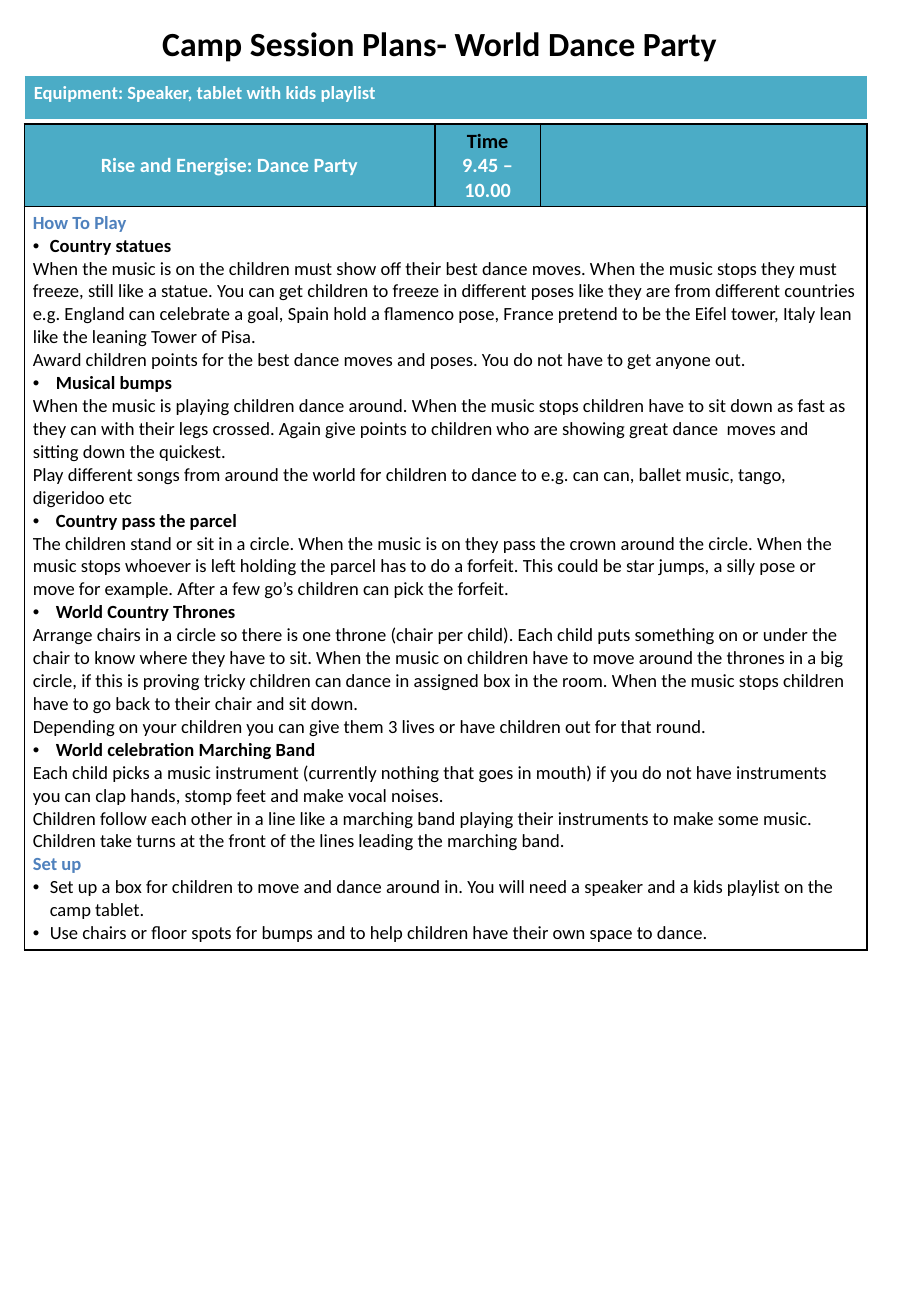
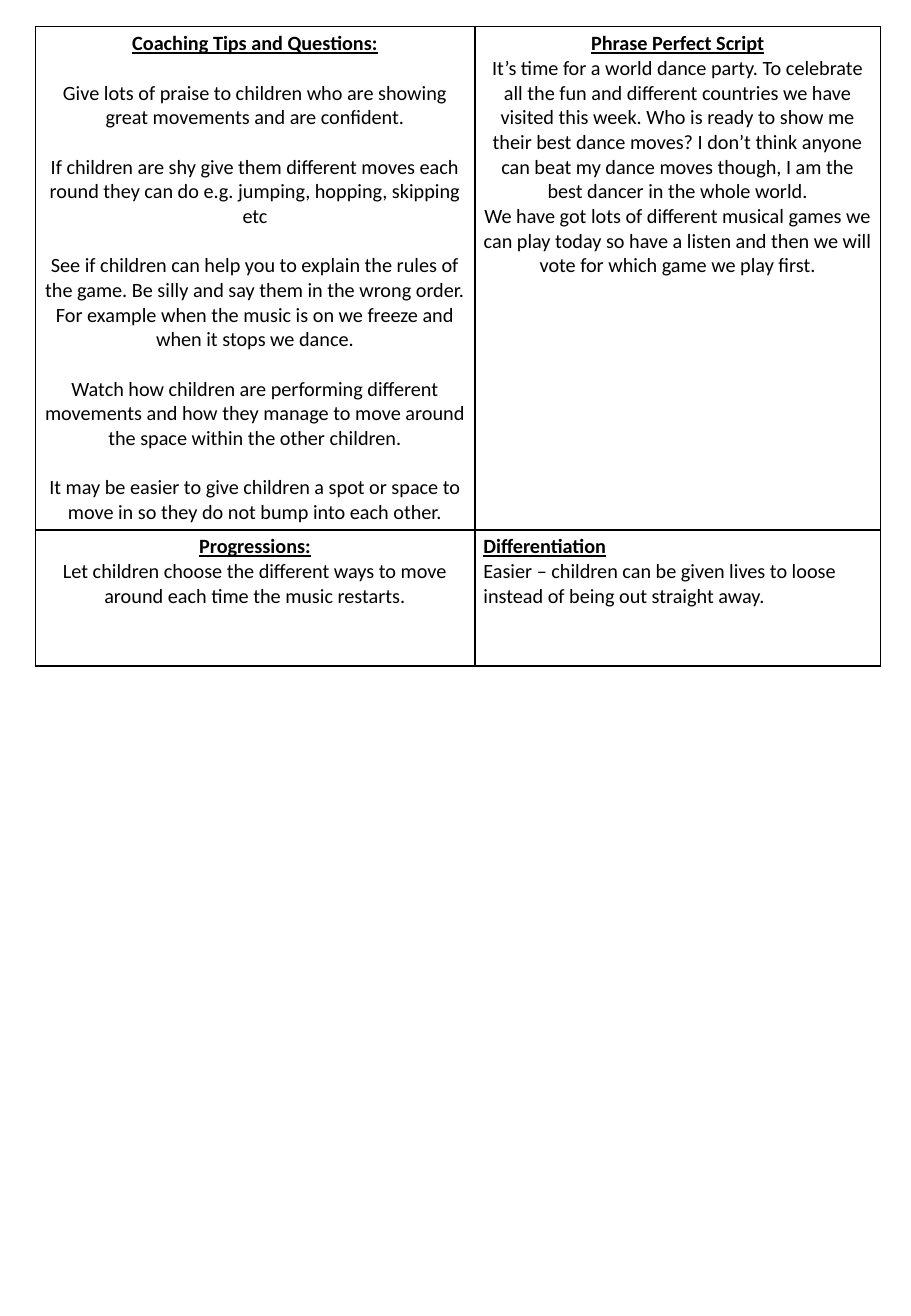
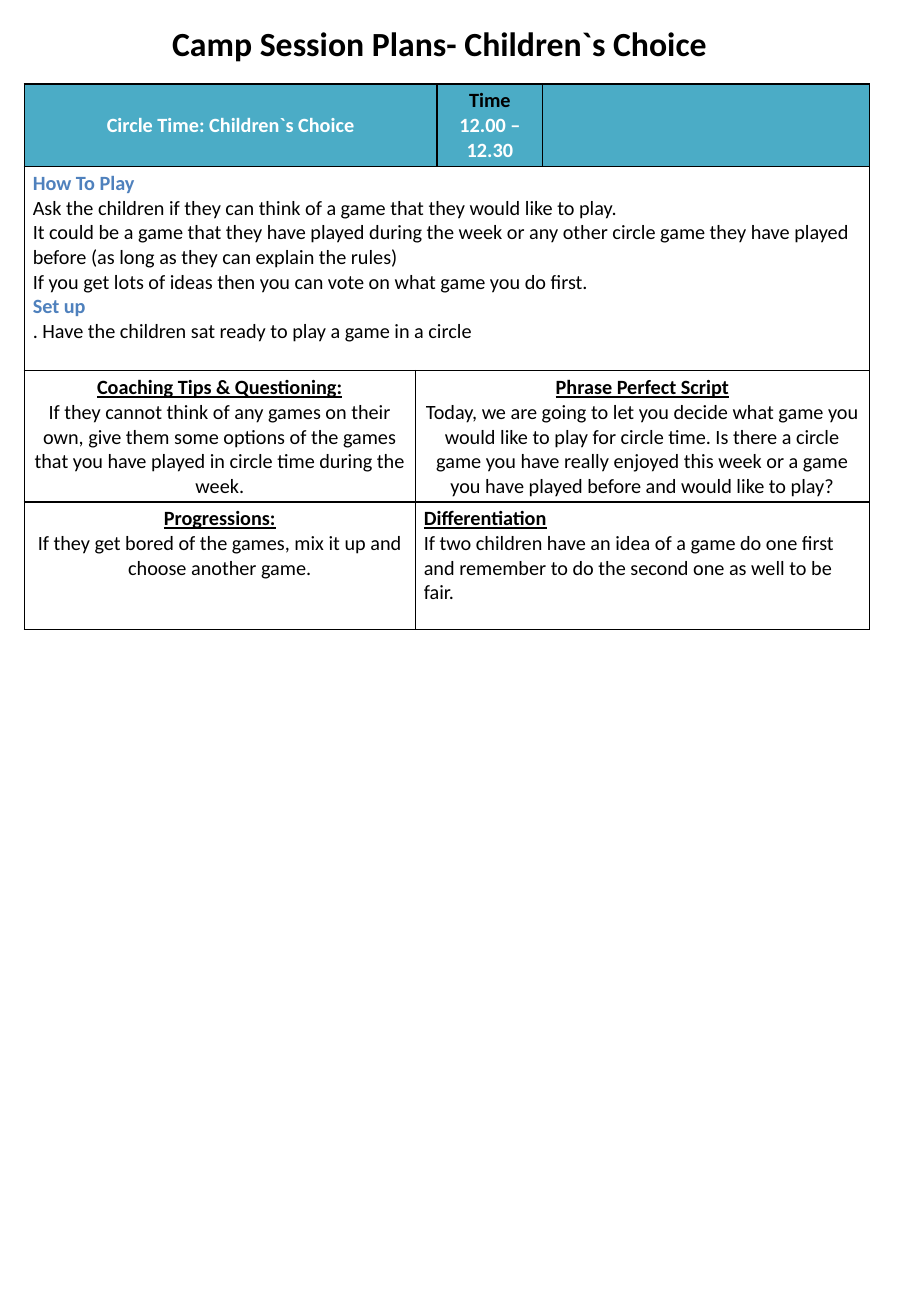
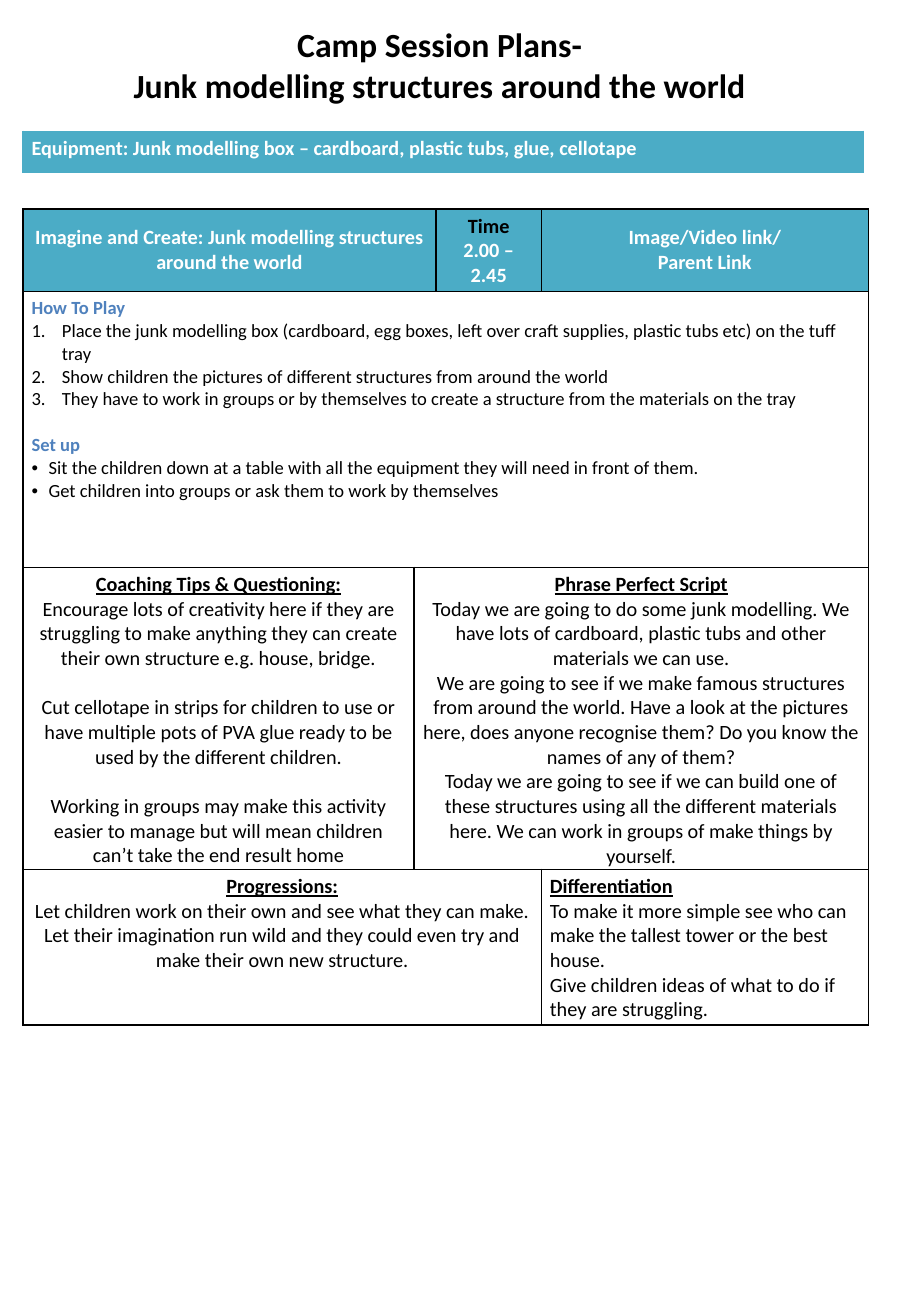
from lxml.etree import SubElement
from pptx import Presentation
from pptx.dml.color import RGBColor
from pptx.enum.text import MSO_ANCHOR as Anchor, MSO_AUTO_SIZE as AutoSize, PP_ALIGN as Align
from pptx.oxml.ns import qn
from pptx.util import Inches, Pt

FONT = "Calibri"
COLORS = {"black": "000000", "white": "FFFFFF", "teal": "4BACC6", "blue": "4F81BD"}
BORDER_SIDES = ("a:lnL", "a:lnR", "a:lnT", "a:lnB")
TITLE_LEFT, TITLE_WIDTH = 0.16, 6.92
EQUIPMENT_WIDTH, EQUIPMENT_HEIGHT = 6.92, 0.34
WIDE_GRID = [3.22, 0.16, 0.87, 2.69]
LINE_HEIGHT = 1.22

ROLES = {
    "banner": {"color": "white", "bold": True},
    "time": {"bold": True},
    "heading": {"color": "blue", "bold": True},
    "spaced heading": {"color": "blue", "bold": True, "gap": True},
    "label": {"bold": True, "underline": True},
    "body": {},
    "spaced": {"gap": True},
    "first point": {"bold": True, "bullet": "•", "indent": 0.14},
    "point": {"bold": True, "bullet": "•", "indent": 0.19},
    "item": {"bullet": "•", "indent": 0.14},
    "step": {"bullet": "1.", "indent": 0.25},
}

CELLS = {
    "band": {"fill": "teal", "align": Align.CENTER, "anchor": Anchor.MIDDLE, "size": 12},
    "equipment": {"fill": "teal", "size": 12},
    "small equipment": {"fill": "teal", "size": 11},
    "plan": {"size": 11},
    "large plan": {"size": 12},
    "notes": {"align": Align.CENTER, "size": 12},
    "left notes": {"size": 12},
}

SESSIONS = [
    {
        "title": (0.14, 0.44, "Camp Session Plans- World Dance Party"),
        "equipment": (0.21, 0.63, "small equipment", "Equipment: Speaker, tablet with kids playlist"),
        "at": (0.2, 1.02),
        "columns": [3.38, 0.87, 2.69],
        "rows": [
            (0.68, [
                ("band", 1, [("banner", "Rise and Energise: Dance Party")]),
                ("band", 1, [("time", "Time"), ("banner", "9.45 – 10.00")]),
                ("band", 1, []),
            ]),
            (6.12, [("plan", 3, [
                ("heading", "How To Play"),
                ("first point", "Country statues"),
                ("body", "When the music is on the children must show off their best dance moves. When the music stops they must freeze, still like a statue. You can get children to freeze in different poses like they are from different countries e.g. England can celebrate a goal, Spain hold a flamenco pose, France pretend to be the Eifel tower, Italy lean like the leaning Tower of Pisa."),
                ("body", "Award children points for the best dance moves and poses. You do not have to get anyone out."),
                ("point", "Musical bumps"),
                ("body", "When the music is playing children dance around. When the music stops children have to sit down as fast as they can with their legs crossed. Again give points to children who are showing great dance  moves and sitting down the quickest."),
                ("body", "Play different songs from around the world for children to dance to e.g. can can, ballet music, tango, digeridoo etc"),
                ("point", "Country pass the parcel"),
                ("body", "The children stand or sit in a circle. When the music is on they pass the crown around the circle. When the music stops whoever is left holding the parcel has to do a forfeit. This could be star jumps, a silly pose or move for example. After a few go’s children can pick the forfeit."),
                ("point", "World Country Thrones"),
                ("body", "Arrange chairs in a circle so there is one throne (chair per child). Each child puts something on or under the chair to know where they have to sit. When the music on children have to move around the thrones in a big circle, if this is proving tricky children can dance in assigned box in the room. When the music stops children have to go back to their chair and sit down."),
                ("body", "Depending on your children you can give them 3 lives or have children out for that round."),
                ("point", "World celebration Marching Band"),
                ("body", "Each child picks a music instrument (currently nothing that goes in mouth) if you do not have instruments you can clap hands, stomp feet and make vocal noises.\nChildren follow each other in a line like a marching band playing their instruments to make some music. Children take turns at the front of the lines leading the marching band."),
                ("heading", "Set up"),
                ("item", "Set up a box for children to move and dance around in. You will need a speaker and a kids playlist on the camp tablet."),
                ("item", "Use chairs or floor spots for bumps and to help children have their own space to dance."),
            ])]),
        ],
    },
    {
        "at": (0.29, 0.22),
        "columns": [3.62, 3.34],
        "rows": [
            (4.14, [
                ("notes", 1, [
                    ("label", "Coaching Tips and Questions:"),
                    ("spaced", "Give lots of praise to children who are showing great movements and are confident."),
                    ("spaced", "If children are shy give them different moves each round they can do e.g. jumping, hopping, skipping etc"),
                    ("spaced", "See if children can help you to explain the rules of the game. Be silly and say them in the wrong order. For example when the music is on we freeze and when it stops we dance."),
                    ("spaced", "Watch how children are performing different movements and how they manage to move around the space within the other children."),
                    ("spaced", "It may be easier to give children a spot or space to move in so they do not bump into each other."),
                ]),
                ("notes", 1, [
                    ("label", "Phrase Perfect Script"),
                    ("body", "It’s time for a world dance party. To celebrate all the fun and different countries we have visited this week. Who is ready to show me their best dance moves? I don’t think anyone can beat my dance moves though, I am the best dancer in the whole world."),
                    ("body", "We have got lots of different musical games we can play today so have a listen and then we will vote for which game we play first."),
                ]),
            ]),
            (1.12, [
                ("notes", 1, [
                    ("label", "Progressions:"),
                    ("body", "Let children choose the different ways to move around each time the music restarts."),
                ]),
                ("left notes", 1, [
                    ("label", "Differentiation"),
                    ("body", "Easier – children can be given lives to loose instead of being out straight away."),
                ]),
            ]),
        ],
    },
    {
        "title": (0.14, 0.44, "Camp Session Plans- Children`s Choice"),
        "at": (0.2, 0.69),
        "columns": WIDE_GRID,
        "rows": [
            (0.68, [
                ("band", 2, [("banner", "Circle Time: Children`s Choice")]),
                ("band", 1, [("time", "Time"), ("banner", "12.00 – 12.30")]),
                ("band", 1, []),
            ]),
            (1.68, [("large plan", 4, [
                ("heading", "How To Play"),
                ("body", "Ask the children if they can think of a game that they would like to play."),
                ("body", "It could be a game that they have played during the week or any other circle game they have played before (as long as they can explain the rules)"),
                ("body", "If you get lots of ideas then you can vote on what game you do first."),
                ("heading", "Set up"),
                ("body", ". Have the children sat ready to play a game in a circle"),
            ])]),
            (1.07, [
                ("notes", 1, [
                    ("label", "Coaching Tips & Questioning:"),
                    ("body", "If they cannot think of any games on their own, give them some options of the games that you have played in circle time during the week."),
                ]),
                ("notes", 3, [
                    ("label", "Phrase Perfect Script"),
                    ("body", "Today, we are going to let you decide what game you would like to play for circle time. Is there a circle game you have really enjoyed this week or a game you have played before and would like to play?"),
                ]),
            ]),
            (1.05, [
                ("notes", 1, [
                    ("label", "Progressions:"),
                    ("body", "If they get bored of the games, mix it up and choose another game."),
                ]),
                ("left notes", 3, [
                    ("label", "Differentiation"),
                    ("body", "If two children have an idea of a game do one first and remember to do the second one as well to be fair."),
                ]),
            ]),
        ],
    },
    {
        "title": (0.15, 0.77, "Camp Session Plans-\nJunk modelling structures around the world"),
        "equipment": (0.19, 1.08, "equipment", "Equipment: Junk modelling box – cardboard, plastic tubs, glue, cellotape"),
        "at": (0.19, 1.72),
        "columns": WIDE_GRID,
        "rows": [
            (0.68, [
                ("band", 2, [("banner", "Imagine and Create: Junk modelling structures around the world")]),
                ("band", 1, [("time", "Time"), ("banner", "2.00 – 2.45")]),
                ("band", 1, [("banner", "Image/Video link/"), ("banner", "Parent Link")]),
            ]),
            (2.27, [("plan", 4, [
                ("heading", "How To Play"),
                ("step", "Place the junk modelling box (cardboard, egg boxes, left over craft supplies, plastic tubs etc) on the tuff tray"),
                ("step", "Show children the pictures of different structures from around the world"),
                ("step", "They have to work in groups or by themselves to create a structure from the materials on the tray"),
                ("spaced heading", "Set up"),
                ("item", "Sit the children down at a table with all the equipment they will need in front of them."),
                ("item", "Get children into groups or ask them to work by themselves"),
            ])]),
            (2.47, [
                ("notes", 1, [
                    ("label", "Coaching Tips & Questioning:"),
                    ("body", "Encourage lots of creativity here if they are struggling to make anything they can create their own structure e.g. house, bridge."),
                    ("spaced", "Cut cellotape in strips for children to use or have multiple pots of PVA glue ready to be used by the different children."),
                    ("spaced", "Working in groups may make this activity easier to manage but will mean children can’t take the end result home"),
                ]),
                ("notes", 3, [
                    ("label", "Phrase Perfect Script"),
                    ("body", "Today we are going to do some junk modelling. We have lots of cardboard, plastic tubs and other materials we can use.\nWe are going to see if we make famous structures from around the world. Have a look at the pictures here, does anyone recognise them? Do you know the names of any of them?"),
                    ("body", "Today we are going to see if we can build one of these structures using all the different materials here. We can work in groups of make things by yourself."),
                ]),
            ]),
            (1.28, [
                ("notes", 3, [
                    ("label", "Progressions:"),
                    ("body", "Let children work on their own and see what they can make. Let their imagination run wild and they could even try and make their own new structure."),
                ]),
                ("left notes", 1, [
                    ("label", "Differentiation"),
                    ("body", "To make it more simple see who can make the tallest tower or the best house."),
                    ("body", "Give children ideas of what to do if they are struggling."),
                ]),
            ]),
        ],
    },
]


def rgb(name):
    return RGBColor.from_string(COLORS[name])


def add_bullet(paragraph, bullet, indent):
    properties = paragraph._p.get_or_add_pPr()
    properties.set("marL", str(Inches(indent)))
    properties.set("indent", str(-Inches(indent)))
    if bullet == "1.":
        SubElement(properties, qn("a:buFont"), typeface="+mj-lt")
        SubElement(properties, qn("a:buAutoNum"), type="arabicPeriod")
    else:
        SubElement(properties, qn("a:buFont"), typeface="Arial")
        SubElement(properties, qn("a:buChar"), char=bullet)


def write_paragraph(paragraph, text, size, align, color="black", bold=False,
                    underline=False, gap=False, bullet=None, indent=0):
    paragraph.text = text
    paragraph.alignment = align
    if gap:
        paragraph.space_before = Pt(round(size * LINE_HEIGHT, 1))
    if bullet:
        add_bullet(paragraph, bullet, indent)
    for run in paragraph.runs:
        font = run.font
        font.name, font.size = FONT, Pt(size)
        font.bold, font.underline = bold, underline
        font.color.rgb = rgb(color)


def add_borders(cell, color):
    properties = cell._tc.get_or_add_tcPr()
    for index, side in enumerate(BORDER_SIDES):
        line = SubElement(properties, qn(side), w=str(Pt(1)))
        fill = SubElement(line, qn("a:solidFill"))
        SubElement(fill, qn("a:srgbClr"), val=COLORS[color])
        properties.insert(index, line)


def style_cell(cell, kind, border):
    look = CELLS[kind]
    cell.margin_left = cell.margin_right = Inches(0.07)
    cell.margin_top = cell.margin_bottom = Inches(0.04)
    cell.vertical_anchor = look.get("anchor", Anchor.TOP)
    if "fill" in look:
        cell.fill.solid()
        cell.fill.fore_color.rgb = rgb(look["fill"])
    else:
        cell.fill.background()
    add_borders(cell, border)


def fill_cell(cell, kind, paragraphs):
    look = CELLS[kind]
    for index, (role, text) in enumerate(paragraphs):
        frame = cell.text_frame
        paragraph = frame.add_paragraph() if index else frame.paragraphs[0]
        write_paragraph(paragraph, text, look["size"], look.get("align", Align.LEFT), **ROLES[role])


def add_grid(slide, left, top, columns, rows, border="black"):
    height = sum(row_height for row_height, _ in rows)
    table = slide.shapes.add_table(
        len(rows), len(columns), Inches(left), Inches(top), Inches(sum(columns)), Inches(height)
    ).table
    table.first_row = table.horz_banding = False
    for column, width in zip(table.columns, columns):
        column.width = Inches(width)
    for row_index, (row_height, cells) in enumerate(rows):
        table.rows[row_index].height = Inches(row_height)
        start = 0
        for kind, span, paragraphs in cells:
            for offset in range(span):
                style_cell(table.cell(row_index, start + offset), kind, border)
            cell = table.cell(row_index, start)
            if span > 1:
                cell.merge(table.cell(row_index, start + span - 1))
            fill_cell(cell, kind, paragraphs)
            start += span


def add_title(slide, top, height, text):
    box = slide.shapes.add_textbox(Inches(TITLE_LEFT), Inches(top), Inches(TITLE_WIDTH), Inches(height))
    frame = box.text_frame
    frame.word_wrap = True
    frame.auto_size = AutoSize.SHAPE_TO_FIT_TEXT
    write_paragraph(frame.paragraphs[0], text, 20, Align.CENTER, bold=True)


def add_equipment(slide, left, top, kind, text):
    rows = [(EQUIPMENT_HEIGHT, [(kind, 1, [("banner", text)])])]
    add_grid(slide, left, top, [EQUIPMENT_WIDTH], rows, border="teal")


def main():
    presentation = Presentation()
    presentation.slide_width, presentation.slide_height = Inches(7.5), Inches(10.83)
    for session in SESSIONS:
        slide = presentation.slides.add_slide(presentation.slide_layouts[6])
        if "title" in session:
            add_title(slide, *session["title"])
        add_grid(slide, *session["at"], session["columns"], session["rows"])
        if "equipment" in session:
            add_equipment(slide, *session["equipment"])
    presentation.save("out.pptx")


if __name__ == "__main__":
    main()
